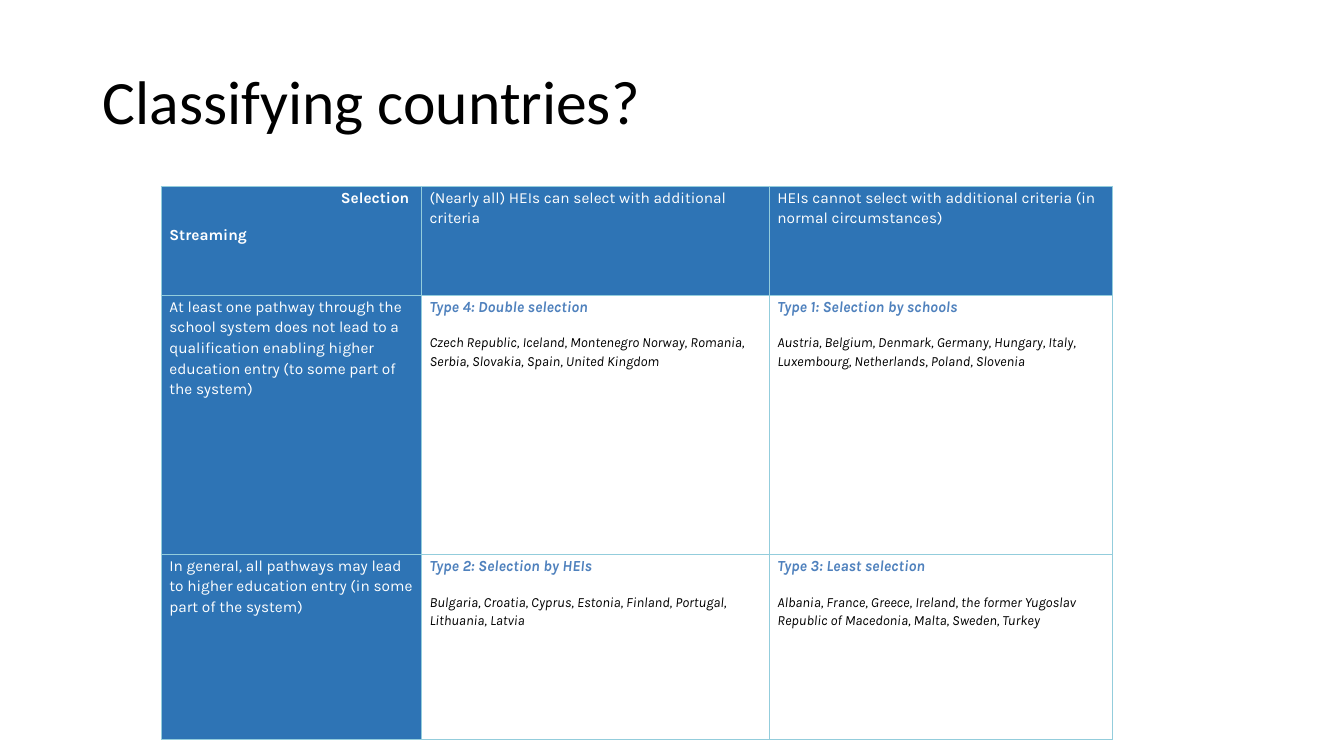
"""Builds a slide that classifies countries by selection and streaming."""
from dataclasses import dataclass

from lxml import etree
from pptx import Presentation
from pptx import util as u
from pptx.dml.color import RGBColor
from pptx.enum import text
from pptx.oxml.ns import qn


@dataclass(frozen=True)
class Theme:
    title_font: str = "Calibri"
    table_font: str = "Karla"
    title_size: int = 44
    label_size: int = 11
    country_size: int = 10
    ink: str = "000000"
    paper: str = "FFFFFF"
    header: str = "2E74B5"
    accent: str = "4F81BD"
    border: str = "93CDDC"


class SlideBuilder:
    def __init__(self, page, theme):
        self.page = page
        self.theme = theme

    def title(self, wording, left, top, width, height):
        box = self.page.shapes.title
        box.left, box.top = u.Inches(left), u.Inches(top)
        box.width, box.height = u.Inches(width), u.Inches(height)
        frame = box.text_frame
        frame.text = wording
        frame.word_wrap = True
        frame.auto_size = text.MSO_AUTO_SIZE.NONE
        frame.vertical_anchor = text.MSO_ANCHOR.MIDDLE
        para = frame.paragraphs[0]
        para.alignment = text.PP_ALIGN.LEFT
        para.line_spacing = 0.9
        self.style(para, self.theme.title_font, self.theme.title_size, self.theme.ink)

    def style(self, para, name, size, color, bold=False, italic=False):
        font = para.font
        font.name, font.size = name, u.Pt(size)
        font.bold, font.italic = bold, italic
        font.color.rgb = RGBColor.from_string(color)

    def table(self, left, top, widths, heights):
        frame = self.page.shapes.add_table(
            len(heights), len(widths), u.Inches(left), u.Inches(top),
            u.Inches(sum(widths)), u.Inches(sum(heights)))
        grid = frame.table
        grid.first_row = grid.horz_banding = False
        for column, width in zip(grid.columns, widths):
            column.width = u.Inches(width)
        for row, height in zip(grid.rows, heights):
            row.height = u.Inches(height)
        for cell in grid.iter_cells():
            cell.margin_left = cell.margin_right = u.Inches(0.08)
            cell.margin_top = cell.margin_bottom = u.Inches(0)
            cell.fill.background()
            self.borders(cell)
        return grid

    def borders(self, cell):
        properties = cell._tc.get_or_add_tcPr()
        for index, side in enumerate(("a:lnL", "a:lnR", "a:lnT", "a:lnB")):
            line = etree.Element(qn(side), w=str(u.Pt(1)))
            fill = etree.SubElement(line, qn("a:solidFill"))
            etree.SubElement(fill, qn("a:srgbClr"), val=self.theme.border)
            properties.insert(index, line)

    def paragraphs(self, cell, lines):
        frame = cell.text_frame
        frame.text = "\n".join(lines)
        for para in frame.paragraphs:
            para.line_spacing = 1.15
            para.space_before = para.space_after = u.Pt(6)
        return frame.paragraphs

    def header_cell(self, cell, *lines, bold=False):
        cell.fill.solid()
        cell.fill.fore_color.rgb = RGBColor.from_string(self.theme.header)
        paras = self.paragraphs(cell, lines)
        for para in paras:
            self.style(para, self.theme.table_font, self.theme.label_size,
                       self.theme.paper, bold)
        return paras

    def type_cell(self, cell, label, countries):
        heading, listing = self.paragraphs(cell, (label, countries))
        self.style(heading, self.theme.table_font, self.theme.label_size,
                   self.theme.accent, bold=True, italic=True)
        self.style(listing, self.theme.table_font, self.theme.country_size,
                   self.theme.ink, italic=True)
        listing.space_after = u.Pt(0)


COLUMN_HEADERS = (
    "(Nearly all) HEIs can select with additional criteria",
    "HEIs cannot select with additional criteria (in normal circumstances)",
)
STREAMING_ROWS = (
    ("At least one pathway through the school system does not lead to a "
     "qualification enabling higher education entry (to some part of the system)",
     ("Type 4: Double selection",
      "Czech Republic, Iceland, Montenegro Norway, Romania, Serbia, Slovakia, "
      "Spain, United Kingdom"),
     ("Type 1: Selection by schools",
      "Austria, Belgium, Denmark, Germany, Hungary, Italy, Luxembourg, "
      "Netherlands, Poland, Slovenia")),
    ("In general, all pathways may lead to higher education entry "
     "(in some part of the system)",
     ("Type 2: Selection by HEIs",
      "Bulgaria, Croatia, Cyprus, Estonia, Finland, Portugal, Lithuania, Latvia"),
     ("Type 3: Least selection",
      "Albania, France, Greece, Ireland, the former Yugoslav Republic of "
      "Macedonia, Malta, Sweden, Turkey")),
)


def main():
    deck = Presentation()
    deck.slide_width, deck.slide_height = u.Inches(13.33), u.Inches(7.5)
    page = deck.slides.add_slide(deck.slide_layouts[5])
    builder = SlideBuilder(page, Theme())
    builder.title("Classifying countries?", 0.92, 0.4, 11.47, 1.27)

    grid = builder.table(1.6, 1.85, (2.58, 3.45, 3.4), (1.08, 2.57, 1.84))
    corner = builder.header_cell(grid.cell(0, 0), "Selection ", "Streaming", bold=True)
    corner[0].alignment = text.PP_ALIGN.RIGHT
    for column, header in enumerate(COLUMN_HEADERS, 1):
        builder.header_cell(grid.cell(0, column), header)
    for row, (streaming, *kinds) in enumerate(STREAMING_ROWS, 1):
        builder.header_cell(grid.cell(row, 0), streaming)
        for column, (label, countries) in enumerate(kinds, 1):
            builder.type_cell(grid.cell(row, column), label, countries)
    deck.save("out.pptx")


if __name__ == "__main__":
    main()
